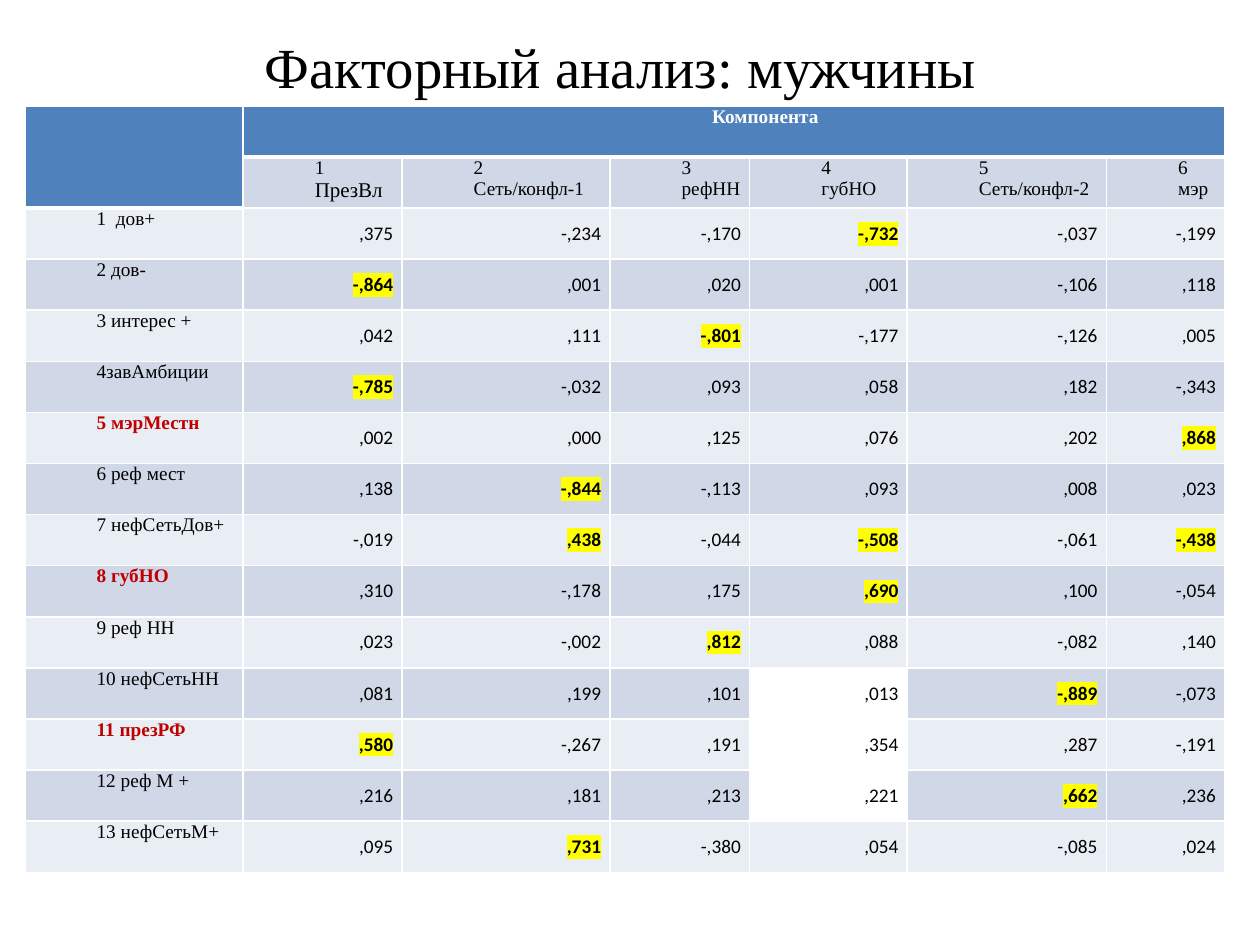
"""Build a slide with the table of factor loadings for men."""
from dataclasses import dataclass

from lxml.etree import SubElement
from pptx import Presentation
from pptx.dml.color import RGBColor as RGB
from pptx.enum.text import MSO_ANCHOR as Anchor, PP_ALIGN as Align
from pptx.oxml import parse_xml
from pptx.oxml.ns import nsdecls, qn
from pptx.util import Pt

BLACK = RGB(0, 0, 0)
WHITE = RGB(0xFF, 0xFF, 0xFF)
BLUE = RGB(0x4F, 0x81, 0xBD)
DARK = RGB(0xD0, 0xD8, 0xE8)
LIGHT = RGB(0xE9, 0xED, 0xF4)
RED = RGB(0xC0, 0, 0)
YELLOW = RGB(0xFF, 0xFF, 0)
SERIF, SANS = "Times New Roman", "Calibri"
WIDTHS = (124.7, 90.8, 118.8, 79.9, 90, 113.8, 67.7)
HIGH = 29.2
HEADS = ("ПрезВл", "Сеть/конфл-1", "рефНН", "губНО", "Сеть/конфл-2", "мэр")


@dataclass
class Style:
    """Look of the text in a cell."""
    font: str = SERIF
    size: float = 11
    color: RGB = BLACK
    bold: bool = False
    mark: bool = False
    align: Align = Align.LEFT
    indent: float = 36


@dataclass
class Item:
    """Table row: name, loadings (a star marks a strong one), plain columns."""
    name: str
    loads: str
    key: bool = False
    bare: tuple = ()


ITEMS = (
    Item("1  дов+", ",375 -,234 -,170 -,732* -,037 -,199"),
    Item("2 дов-", "-,864* ,001 ,020 ,001 -,106 ,118"),
    Item("3 интерес +", ",042 ,111 -,801* -,177 -,126 ,005"),
    Item("4завАмбиции", "-,785* -,032 ,093 ,058 ,182 -,343"),
    Item("5 мэрМестн", ",002 ,000 ,125 ,076 ,202 ,868*", key=True),
    Item("6 реф мест", ",138 -,844* -,113 ,093 ,008 ,023"),
    Item("7 нефСетьДов+", "-,019 ,438* -,044 -,508* -,061 -,438*"),
    Item("8 губНО", ",310 -,178 ,175 ,690* ,100 -,054", key=True),
    Item("9 реф НН", ",023 -,002 ,812* ,088 -,082 ,140"),
    Item("10 нефСетьНН", ",081 ,199 ,101 ,013 -,889* -,073", bare=(4,)),
    Item("11 презРФ", ",580* -,267 ,191 ,354 ,287 -,191", key=True, bare=(4,)),
    Item("12 реф М +", ",216 ,181 ,213 ,221 ,662* ,236", bare=(4,)),
    Item("13 нефСетьМ+", ",095 ,731* -,380 ,054 -,085 ,024"),
)


def dress(para, style: Style) -> None:
    """Format a paragraph and its runs."""
    para.alignment = style.align
    props = para._p.get_or_add_pPr()
    props.set("marL", str(Pt(style.indent)))
    props.set("indent", "0")
    for run in para.runs:
        font = run.font
        font.size, font.bold, font.name = Pt(style.size), style.bold, style.font
        font.color.rgb = style.color
        if style.mark:
            glow = parse_xml(f'<a:highlight {nsdecls("a")}>'
                             f'<a:srgbClr val="{YELLOW}"/></a:highlight>')
            run._r.rPr.find(qn("a:solidFill")).addnext(glow)


def frame(cell, fill, base: float = 1) -> None:
    """Give a cell white borders, its margins and its fill."""
    props = cell._tc.get_or_add_tcPr()
    for side, width in (("L", 1), ("R", 1), ("T", 1), ("B", base)):
        line = SubElement(props, qn(f"a:ln{side}"), w=str(Pt(width)))
        paint = SubElement(line, qn("a:solidFill"))
        SubElement(paint, qn("a:srgbClr"), val=str(WHITE))
    cell.margin_left = cell.margin_right = Pt(5)
    cell.margin_top = cell.margin_bottom = 0
    if fill is None:
        cell.fill.background()
    else:
        cell.fill.solid()
        cell.fill.fore_color.rgb = fill


def write(cell, text: str, *styles: Style) -> None:
    """Put text in a cell, one style per paragraph."""
    cell.text_frame.text = text
    for para, style in zip(cell.text_frame.paragraphs, styles):
        dress(para, style)


def add_title(slide, text: str) -> None:
    """Draw the slide title."""
    box = slide.shapes.add_textbox(Pt(8.6), Pt(15.1), Pt(692), Pt(45.4))
    body = box.text_frame
    body.word_wrap = True
    body.vertical_anchor = Anchor.MIDDLE
    body.text = text
    dress(body.paragraphs[0], Style(size=32.4, align=Align.CENTER, indent=0))


def add_head(table) -> None:
    """Fill the two header rows."""
    for row in (0, 1):
        frame(table.cell(row, 0), BLUE, 3)
    for col, name in enumerate(HEADS, 1):
        frame(table.cell(0, col), BLUE, 3)
        cell = table.cell(1, col)
        frame(cell, DARK)
        write(cell, f"{col}\n{name}", Style(), Style(size=12 if col == 1 else 11))
    table.cell(0, 0).merge(table.cell(1, 0))
    table.cell(0, 1).merge(table.cell(0, len(HEADS)))
    write(table.cell(0, 1), "Компонента",
          Style(color=WHITE, bold=True, align=Align.CENTER))


def add_item(table, row: int, item: Item) -> None:
    """Fill one row of loadings."""
    band = DARK if row % 2 else LIGHT
    name = table.cell(row, 0)
    frame(name, band)
    write(name, item.name, Style(color=RED if item.key else BLACK, bold=item.key))
    for col, load in enumerate(item.loads.split(), 1):
        cell = table.cell(row, col)
        frame(cell, None if col in item.bare else band)
        cell.vertical_anchor = Anchor.MIDDLE
        high = load.endswith("*")
        write(cell, load.rstrip("*"),
              Style(SANS, bold=high, mark=high, align=Align.RIGHT, indent=0))


def main() -> None:
    """Build and save the slide."""
    deck = Presentation()
    deck.slide_width, deck.slide_height = Pt(720), Pt(540)
    slide = deck.slides.add_slide(deck.slide_layouts[6])
    add_title(slide, "Факторный анализ: мужчины")
    count = len(ITEMS) + 2
    table = slide.shapes.add_table(count, len(WIDTHS), Pt(14.2), Pt(60.5),
                                   Pt(sum(WIDTHS)), Pt(HIGH * count)).table
    table.first_row = table.horz_banding = False
    for col, width in zip(table.columns, WIDTHS):
        col.width = Pt(width)
    for row in table.rows:
        row.height = Pt(HIGH)
    add_head(table)
    for row, item in enumerate(ITEMS, 2):
        add_item(table, row, item)
    deck.save("out.pptx")


if __name__ == "__main__":
    main()
